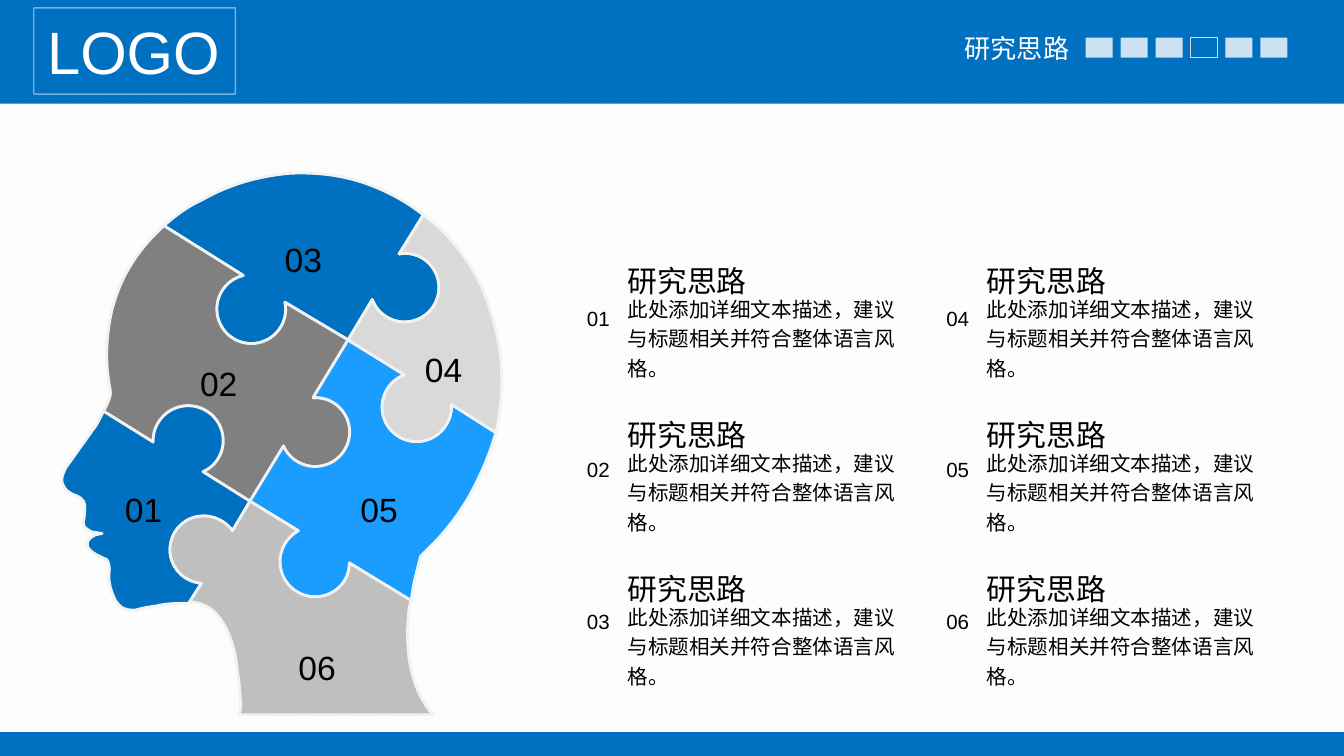
from math import atan2, cos, hypot, pi, sin, tan

from lxml import etree
from pptx import Presentation
from pptx.dml.color import RGBColor
from pptx.enum.dml import MSO_PATTERN
from pptx.enum.shapes import MSO_SHAPE
from pptx.enum.text import MSO_ANCHOR, MSO_AUTO_SIZE, PP_ALIGN
from pptx.oxml.ns import qn
from pptx.util import Cm, Pt

RECT = MSO_SHAPE.RECTANGLE
DIAGONAL = MSO_PATTERN.LIGHT_UPWARD_DIAGONAL
TOP, BOTTOM = MSO_ANCHOR.TOP, MSO_ANCHOR.BOTTOM
LEFT, CENTER = PP_ALIGN.LEFT, PP_ALIGN.CENTER
GROW = MSO_AUTO_SIZE.SHAPE_TO_FIT_TEXT

# Content
TITLE = "研究思路"
BODY = "此处添加详细文本描述，建议与标题相关并符合整体语言风格。"
ITEMS = [(f"{n:02}", TITLE, BODY) for n in range(1, 7)]
STEPS, CURRENT_STEP = 6, 3

# Colours
BLUE, WHITE, BLACK, PALE, GRAY = "0070C0", "FFFFFF", "000000", "F2F2F2", "D9D9D9"

# Head: pieces meet at the joints A-H, on a grid of 0.0254 cm
GRID = Cm(0.0254)
JOINTS = {"A": (122, 168), "B": (315, 160), "C": (259, 253), "D": (77, 306),
          "E": (186, 373), "F": (369, 322), "G": (306, 447), "H": (141, 448)}

# Puzzle seams: neck, knob centre, neck
SEAMS = {
    "AC": ((181, 205), (187, 230), (212, 225)),
    "CB": ((277, 223), (301, 214), (297, 189)),
    "DE": ((114, 329), (140, 328), (151, 351)),
    "EC": ((211, 332), (234.5, 321.5), (233, 296)),
    "CF": ((301, 279), (310, 303), (336, 301)),
    "EG": ((222, 395), (234.5, 418), (260, 419)),
    "HE": ((150, 434), (151.5, 409), (173, 395)),
}

# Outline of the head: Bezier points after the first joint
OUTLINE = {
    "AB": [(130, 161), (139, 154), (150, 149), (171, 137), (193, 131), (216, 129),
           (239, 128), (260, 131), (281, 140), (293, 145), (305, 152), (315, 160)],
    "BF": [(322, 165), (329, 171), (335, 178), (351, 196), (362, 217), (368, 242),
           (375, 269), (375, 295), (369, 322)],
    "FG": [(365, 336), (359, 351), (351, 366), (344, 379), (335, 391), (326, 401),
           (326, 401), (313, 414), (313, 414), (313, 414), (310, 426), (310, 426),
           (308, 433), (307, 440), (306, 447)],
    "GH": [(305, 450), (304, 453), (304, 457), (301, 489), (307, 514), (322, 532),
           (322, 532), (178, 532), (178, 532), (178, 532), (179, 527), (179, 527),
           (179, 514), (177, 501), (175, 487), (169, 461), (157, 448), (141, 448)],
    "DH": [(75, 310), (73, 315), (69, 320), (59, 334), (52, 344), (49, 348),
           (46, 354), (45, 358), (47, 361), (48, 364), (51, 367), (57, 369),
           (62, 371), (64, 375), (63, 379), (63, 381), (63, 384), (62, 389),
           (62, 392), (64, 394), (69, 396), (71, 396), (74, 397), (76, 397),
           (74, 397), (73, 398), (71, 398), (67, 400), (65, 402), (65, 405),
           (65, 408), (67, 410), (72, 413), (75, 414), (77, 416), (79, 416),
           (81, 418), (82, 422), (81, 428), (81, 435), (83, 441), (86, 447),
           (88, 450), (91, 453), (93, 453), (95, 454), (98, 454), (101, 454),
           (104, 453), (108, 452), (116, 451), (124, 449), (132, 449), (140, 449),
           (140, 448), (141, 448), (141, 448)],
    "AD": [(102, 186), (89, 207), (83, 232), (79, 250), (78, 270), (82, 290),
           (83, 293), (81, 299), (77, 306)],
}

# Pieces: joints in order, fill, label, label position in cm
PIECES = [
    ("ABC", BLUE, "03", (5.38, 4.52)),
    ("DACE", "808080", "02", (3.78, 6.86)),
    ("HDE", BLUE, "01", (2.36, 9.25)),
    ("ECFG", "1B9DFF", "05", (6.81, 9.25)),
    ("HGE", "BFBFBF", "06", (5.64, 12.24)),
    ("FBC", GRAY, "04", (8.03, 6.6)),
]

# Text formats
LABEL = dict(pad=0, anchor=BOTTOM, align=CENTER, before=6)
ITEM = dict(pad=0.13, wrap=True)


def rgb(value):
    return RGBColor.from_string(value)


def set_alpha(properties, percent):
    for color in properties.iter(qn("a:srgbClr")):
        etree.SubElement(color, qn("a:alpha"), val=str(percent * 1000))


def paint(sp, fill=None, line=None, width=1):
    sp.shadow.inherit = False
    for part, color in ((sp.fill, fill), (sp.line.fill, line)):
        if color:
            part.solid()
            part.fore_color.rgb = rgb(color)
        else:
            part.background()
    if line:
        sp.line.width = Pt(width)
    return sp


def add_rect(x, y, w, h, **style):
    return paint(s.shapes.add_shape(RECT, Cm(x), Cm(y), Cm(w), Cm(h)), **style)


def write(sp, text, size, color=BLACK, pad=0.25, wrap=False, anchor=TOP,
          align=LEFT, before=0, spacing=None):
    tf = sp.text_frame
    side, end = Cm(pad), Cm(min(pad, 0.13))
    frame = dict(word_wrap=wrap, auto_size=GROW, vertical_anchor=anchor, margin_left=side,
                 margin_right=side, margin_top=end, margin_bottom=end)
    p = tf.paragraphs[0]
    r = p.add_run()
    r.text = text
    r.font.color.rgb = rgb(color)
    for target, values in (
        (tf, frame),
        (p, dict(alignment=align, space_before=Pt(before), line_spacing=spacing)),
        (r.font, dict(name="Arial", size=Pt(size))),
    ):
        for name, value in values.items():
            setattr(target, name, value)


def add_text(shapes, x, y, w, h, text, size, **style):
    write(shapes.add_textbox(Cm(x), Cm(y), Cm(w), Cm(h)), text, size, **style)


def knob(start, center, end, parts=3):
    """Bezier points along the longer arc between the two necks."""
    (x0, y0), (cx, cy), (x1, y1) = start, center, end
    a0, a1 = atan2(y0 - cy, x0 - cx), atan2(y1 - cy, x1 - cx)
    radius = hypot(x0 - cx, y0 - cy)
    sweep = (a1 - a0) % (2 * pi)
    if sweep < pi:
        sweep -= 2 * pi
    k = 4 / 3 * tan(sweep / parts / 4)

    def on_arc(i, pull=0):
        angle = a0 + sweep * i / parts
        return (cx + radius * (cos(angle) - pull * sin(angle)),
                cy + radius * (sin(angle) + pull * cos(angle)))

    points = [start]
    for i in range(parts):
        points += [on_arc(i, k), on_arc(i + 1, -k), on_arc(i + 1)]
    return points[:-1] + [end]


def edge(a, b):
    """Bezier points from joint to joint, both included."""
    if a + b in SEAMS:
        first, center, last = SEAMS[a + b]
        return ([JOINTS[a], JOINTS[a], first] + knob(first, center, last)
                + [last, JOINTS[b], JOINTS[b]])
    if a + b in OUTLINE:
        return [JOINTS[a]] + OUTLINE[a + b]
    return edge(b, a)[::-1]


def add_piece(shapes, joints, fill):
    points = [JOINTS[joints[0]]]
    for a, b in zip(joints, joints[1:] + joints[0]):
        points += edge(a, b)[1:]
    points = [(round(x * GRID), round(y * GRID)) for x, y in points]
    builder = shapes.build_freeform(*points[0])
    builder.add_line_segments(points[1:], close=True)
    sp = paint(builder.convert_to_shape(), fill=fill, line=PALE, width=1.5)
    # Join each three segments into one curve
    segments = list(sp._element.iter(qn("a:lnTo")))
    for i in range(0, len(segments) - 2, 3):
        bezier = etree.Element(qn("a:cubicBezTo"))
        segments[i].addprevious(bezier)
        for segment in segments[i:i + 3]:
            bezier.append(segment[0])
            segment.getparent().remove(segment)


prs = Presentation()
prs.slide_width, prs.slide_height = Cm(25.4), Cm(14.29)
s = prs.slides.add_slide(prs.slide_layouts[6])

# Background and bands
bg = s.background.fill
bg.patterned()
bg.pattern = DIAGONAL
bg.fore_color.rgb, bg.back_color.rgb = rgb(PALE), rgb(WHITE)
add_rect(0, 0, 25.4, 1.96, fill=BLUE)
add_rect(0, 13.84, 25.4, 0.45, fill=BLUE)

# Header: title, step markers, logo box
add_text(s.shapes, 17.98, 0.48, 2.54, 0.86, TITLE, 14, color=WHITE)
for i in range(STEPS):
    style = dict(line=GRAY, width=0.5) if i == CURRENT_STEP else dict(fill=WHITE)
    marker = add_rect(20.52 + 0.66 * i, 0.71, 0.51, 0.38, **style)
    if i != CURRENT_STEP:
        set_alpha(marker._element.spPr, 80)
logo = add_rect(0.64, 0.15, 3.81, 1.63, line=WHITE, width=0.75)
set_alpha(logo._element.spPr, 46)
write(logo, "LOGO", 32, color=WHITE)

# Puzzle head
head = s.shapes.add_group_shape().shapes
for joints, fill, _, _ in PIECES:
    add_piece(head, joints, fill)
for _, _, label, (x, y) in PIECES:
    add_text(head, x, y, 0.71, 0.76, label, 18, **LABEL)

# Six items, down each of two columns
for i, (number, title, body) in enumerate(ITEMS):
    col, row = divmod(i, 3)
    x, y = 11.73 + 6.79 * col, 4.83 + 2.91 * row
    item = s.shapes.add_group_shape().shapes
    add_text(item, x, y, 5.61, 0.94, title, 16, before=2, **ITEM)
    add_text(item, x, y + 0.56, 5.61, 1.96, body, 11, before=1, spacing=1.2, **ITEM)
    add_text(item, x - 0.65, 5.77 + 2.86 * row, 0.46, 0.48, number, 11, **LABEL)

prs.save("out.pptx")
